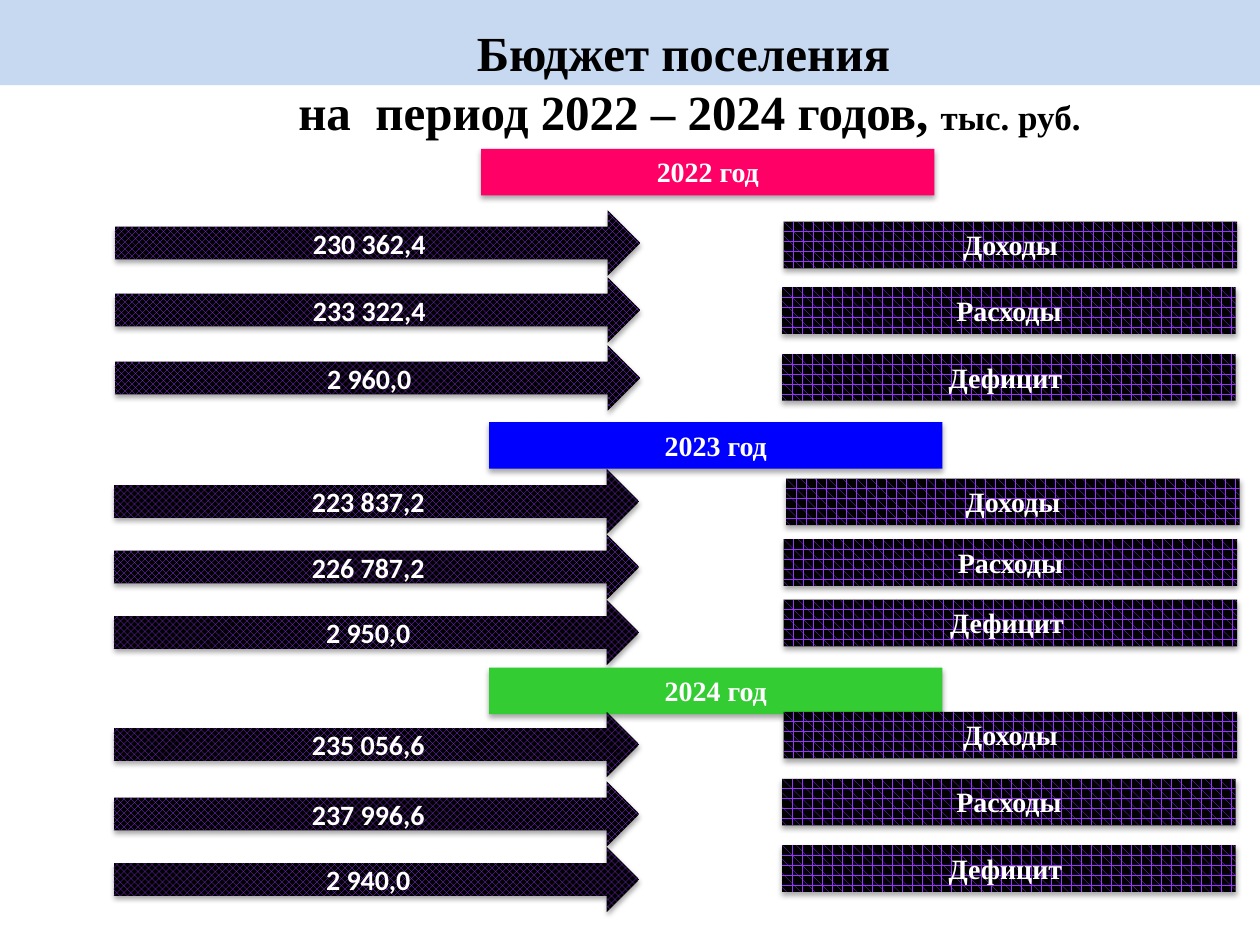
from lxml import etree
from pptx import Presentation
from pptx.dml.color import RGBColor
from pptx.enum.dml import MSO_PATTERN
from pptx.enum.shapes import MSO_SHAPE
from pptx.enum.text import MSO_ANCHOR, MSO_AUTO_SIZE, PP_ALIGN
from pptx.oxml import parse_xml
from pptx.util import Cm, Pt

RECT, ARROW = MSO_SHAPE.RECTANGLE, MSO_SHAPE.RIGHT_ARROW
CHECK, PLAID = MSO_PATTERN.LARGE_CHECKER_BOARD, MSO_PATTERN.PLAID
TOP, MIDDLE = MSO_ANCHOR.TOP, MSO_ANCHOR.MIDDLE
CENTER, GROW = PP_ALIGN.CENTER, MSO_AUTO_SIZE.SHAPE_TO_FIT_TEXT
NONE = MSO_AUTO_SIZE.NONE
NS = 'xmlns:a="http://schemas.openxmlformats.org/drawingml/2006/main"'
SHADE = (f'<a:outerShdw {NS} blurRad="40000" dist="23000" dir="5400000" rotWithShape="0">'
         '<a:srgbClr val="000000"><a:alpha val="35000"/></a:srgbClr></a:outerShdw>')
EDGE = (f'<a:ln {NS} w="10541"><a:solidFill><a:srgbClr val="467AB8"/></a:solidFill>'
        '<a:prstDash val="solid"/></a:ln>')
rgb = RGBColor.from_string

SERIF = {"name": "Times New Roman", "size": Pt(16), "bold": True}
SANS = {**SERIF, "name": "Calibri"}
HEAD = {**SERIF, "size": Pt(28)}
UNIT = {**SERIF, "size": Pt(20)}
BAR = {"anchor": TOP, "auto": GROW, "font": SERIF, "size": (9.14, 0.94)}
FLOW = {"anchor": MIDDLE, "auto": NONE, "font": SANS, "size": (10.6, 1.32)}


def write(para, text, look, color):
    para.alignment = CENTER
    run = para.add_run()
    run.text = text
    for key, value in look.items():
        setattr(run.font, key, value)
    run.font.color.rgb = rgb(color)
    return run


def block(kind, left, top, text, style, fill):
    width, height = style["size"]
    shape = slide.shapes.add_shape(kind, Cm(left), Cm(top), Cm(width), Cm(height))
    shape.line.fill.background()
    shape.shadow.inherit = False
    shape._element.spPr.find("{*}effectLst").append(parse_xml(SHADE))
    if isinstance(fill, str):
        shape.fill.solid()
        shape.fill.fore_color.rgb = rgb(fill)
    else:
        shape.fill.patterned()
        shape.fill.pattern = fill
        shape.fill.fore_color.rgb = rgb("9933FF")
        shape.fill.back_color.rgb = rgb("000000")
    frame = shape.text_frame
    frame.word_wrap = True
    frame.auto_size = style["auto"]
    frame.vertical_anchor = style["anchor"]
    write(frame.paragraphs[0], text, style["font"], "FFFFFF")


deck = Presentation()
deck.slide_width, deck.slide_height = Cm(25.4), Cm(19.05)
slide = deck.slides.add_slide(deck.slide_layouts[6])

band = slide.shapes.add_shape(RECT, 0, 0, Cm(25.4), Cm(1.72))
band.shadow.inherit = False
band.fill.solid()
band.fill.fore_color.rgb = rgb("C6D9F1")
band.line.fill.background()

title = slide.shapes.add_textbox(Cm(2.9), Cm(0.33), Cm(22), Cm(2.64)).text_frame
title.word_wrap = True
title.auto_size = GROW
lines = [
    [("Бюджет поселения ", HEAD)],
    [("на  период 2022 – 2024 годов, ", HEAD), ("тыс. руб.", UNIT)],
]
title.add_paragraph()
for para, parts in zip(title.paragraphs, lines):
    for text, look in parts:
        run = write(para, text, look, "000000")
        run.font._element.insert(0, etree.fromstring(EDGE))

names = ["Доходы", "Расходы", "Дефицит "]
years = [
    ("2022 год", "FF0066", 9.7, 3, 2.31,
     [("230 362,4", 4.24, 15.8, 4.47), ("233 322,4", 5.59, 15.77, 5.79),
      ("2 960,0", 6.96, 15.77, 7.14)]),
    ("2023 год", "0000FF", 9.86, 8.51, 2.29,
     [("223 837,2", 9.45, 15.85, 9.65), ("226 787,2", 10.77, 15.8, 10.87),
      ("2 950,0", 12.09, 15.8, 12.09)]),
    ("2024 год", "33CC33", 9.86, 13.46, 2.29,
     [("235 056,6", 14.35, 15.8, 14.35), ("237 996,6", 15.75, 15.77, 15.7),
      ("2 940,0", 17.07, 15.77, 17.04)]),
]
for year, color, left, top, start, rows in years:
    block(RECT, left, top, year, BAR, color)
    for name, (sum_, high, side, level) in zip(names, rows):
        block(ARROW, start, high, sum_, FLOW, CHECK)
        block(RECT, side, level, name, BAR, PLAID)

deck.save("out.pptx")
